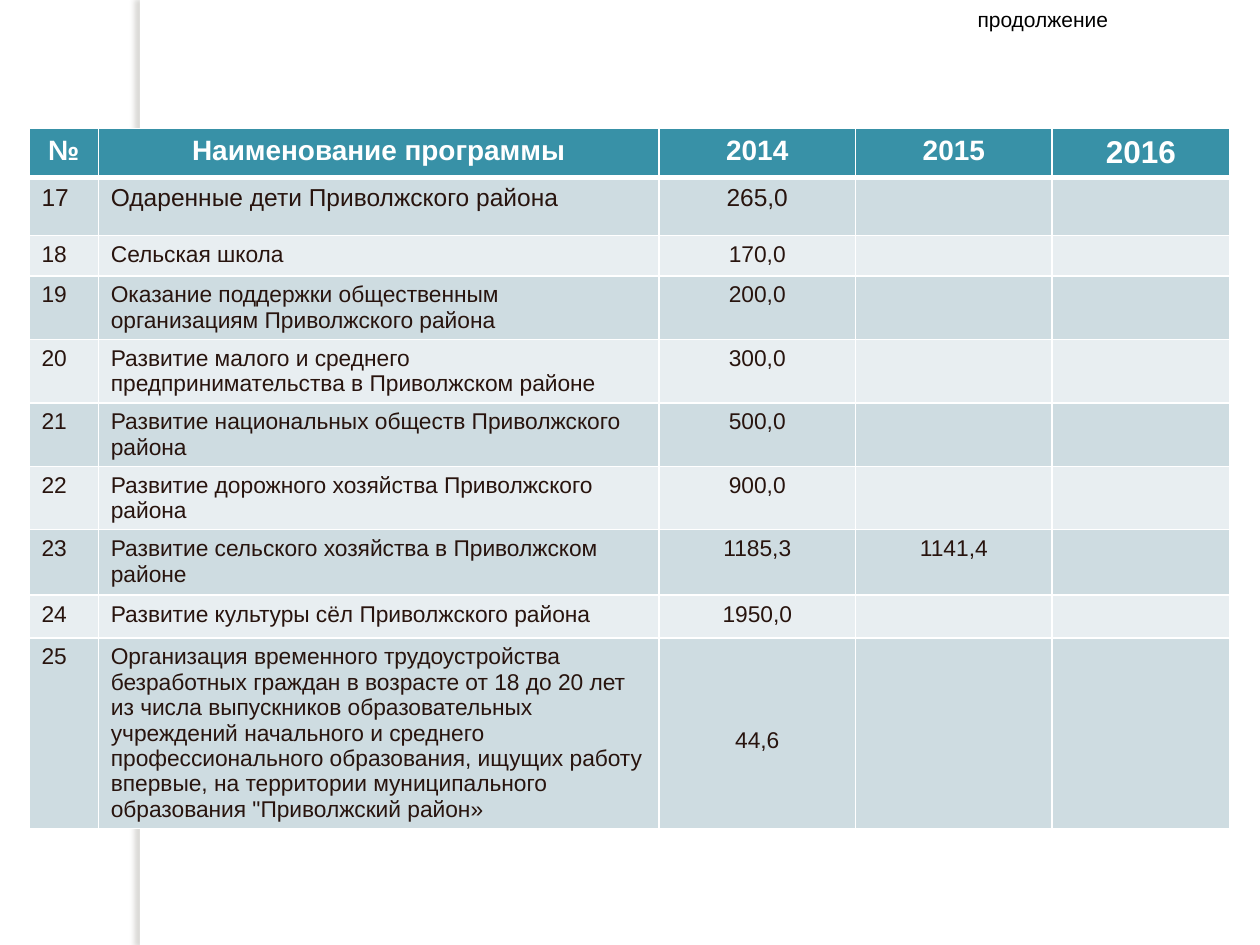
import pptx
import pptx.util
import pptx.dml.color
import pptx.enum.shapes
import pptx.enum.text
import pptx.oxml
import pptx.oxml.ns
import lxml.etree

Inches, Pt = pptx.util.Inches, pptx.util.Pt
RGB = pptx.dml.color.RGBColor.from_string
CENTER = pptx.enum.text.PP_ALIGN.CENTER
LEFT = pptx.enum.text.PP_ALIGN.LEFT

# Content
CONTINUED = "продолжение"
HEADINGS = ["№", "Наименование программы", "2014", "2015", "2016"]
FIRST_NUMBER = 17
PROGRAMS = [
    ("Одаренные дети Приволжского района", "265,0", ""),
    ("Сельская школа", "170,0", ""),
    ("Оказание поддержки общественным организациям Приволжского района", "200,0", ""),
    ("Развитие малого и среднего предпринимательства в Приволжском районе", "300,0", ""),
    ("Развитие национальных обществ Приволжского района", "500,0", ""),
    ("Развитие дорожного хозяйства Приволжского района", "900,0", ""),
    ("Развитие сельского хозяйства в Приволжском районе", "1185,3", "1141,4"),
    ("Развитие культуры сёл Приволжского района", "1950,0", ""),
    ("Организация временного трудоустройства безработных граждан в возрасте "
     "от 18 до 20 лет из числа выпускников образовательных учреждений начального "
     "и среднего профессионального образования, ищущих работу впервые, "
     "на территории муниципального образования \"Приволжский район»", "44,6", ""),
]
COLUMN_WIDTHS = [0.55, 4.45, 1.56, 1.56, 1.41]
ROW_HEIGHTS = [0.39, 0.46, 0.32, 0.5, 0.5, 0.5, 0.5, 0.52, 0.34, 1.5]
COLORS = {"header": "3891A7", "odd": "CEDCE1", "even": "E8EEF1", "ink": "28140E",
          "white": "FFFFFF", "black": "000000", "shadow": "736F63"}
FONT = "Arial"


def write(paragraph, text, size, color, bold=False, align=LEFT):
    paragraph.alignment = align
    if text:
        run = paragraph.add_run()
        run.text = text
        run.font.color.rgb = RGB(COLORS[color])
        for name, value in {"name": FONT, "size": Pt(size), "bold": bold}.items():
            setattr(run.font, name, value)
    else:
        # The end mark sets the line height of an empty cell
        end = lxml.etree.SubElement(paragraph._p, pptx.oxml.ns.qn("a:endParaRPr"))
        end.set("sz", str(size * 100))


def set_borders(cell, bottom):
    properties = cell._tc.get_or_add_tcPr()
    widths = {"lnL": 1, "lnR": 1, "lnT": 1, "lnB": bottom}
    for position, (side, width) in enumerate(widths.items()):
        properties.insert(position, pptx.oxml.parse_xml(
            f'<a:{side} {pptx.oxml.ns.nsdecls("a")} w="{Pt(width)}"><a:solidFill>'
            f'<a:srgbClr val="{COLORS["white"]}"/></a:solidFill></a:{side}>'))


def add_band(slide):
    band = slide.shapes.add_shape(pptx.enum.shapes.MSO_SHAPE.RECTANGLE,
                                  Inches(1.11), 0, Inches(0.08), Inches(7.5))
    band.shadow.inherit = False
    band.fill.solid()
    band.fill.fore_color.rgb = RGB(COLORS["white"])
    band.line.fill.background()
    effects = band._element.spPr.find(pptx.oxml.ns.qn("a:effectLst"))
    effects.append(pptx.oxml.parse_xml(
        f'<a:outerShdw {pptx.oxml.ns.nsdecls("a")} blurRad="{Pt(3)}" dist="{Pt(3)}" '
        f'dir="10800000" algn="tl" rotWithShape="0"><a:srgbClr val="{COLORS["shadow"]}">'
        '<a:alpha val="25000"/></a:srgbClr></a:outerShdw>'))


def add_programs(slide):
    rows = [HEADINGS] + [(str(number), *program, "")
                         for number, program in enumerate(PROGRAMS, FIRST_NUMBER)]
    programs = slide.shapes.add_table(
        len(rows), len(HEADINGS), Inches(0.23), Inches(1.02),
        Inches(sum(COLUMN_WIDTHS)), Inches(sum(ROW_HEIGHTS))).table
    for column, width in zip(programs.columns, COLUMN_WIDTHS):
        column.width = Inches(width)
    for r, (values, height) in enumerate(zip(rows, ROW_HEIGHTS)):
        programs.rows[r].height = Inches(height)
        header = r == 0
        fill = "header" if header else "odd" if r % 2 else "even"
        for c, value in enumerate(values):
            cell = programs.cell(r, c)
            cell.fill.solid()
            cell.fill.fore_color.rgb = RGB(COLORS[fill])
            set_borders(cell, 3 if header else 1)
            size = (18 if c == 4 else 16) if header else 14 if r == 1 else 13
            write(cell.text_frame.paragraphs[0], value, size,
                  "white" if header else "ink", header,
                  CENTER if header or c > 1 else LEFT)
    # The last amount stands beside the middle of its long name
    programs.cell(len(rows) - 1, 2).margin_top = Inches(0.71)


def add_continued(slide):
    frame = slide.shapes.add_textbox(Inches(7.66), 0, Inches(1.95), Inches(0.3)).text_frame
    frame.word_wrap = True
    write(frame.paragraphs[0], CONTINUED, 12, "black")


def main():
    deck = pptx.Presentation()
    deck.slide_width, deck.slide_height = Inches(10), Inches(7.5)
    slide = deck.slides.add_slide(deck.slide_layouts[6])
    add_band(slide)
    add_programs(slide)
    add_continued(slide)
    deck.save("out.pptx")


if __name__ == "__main__":
    main()
